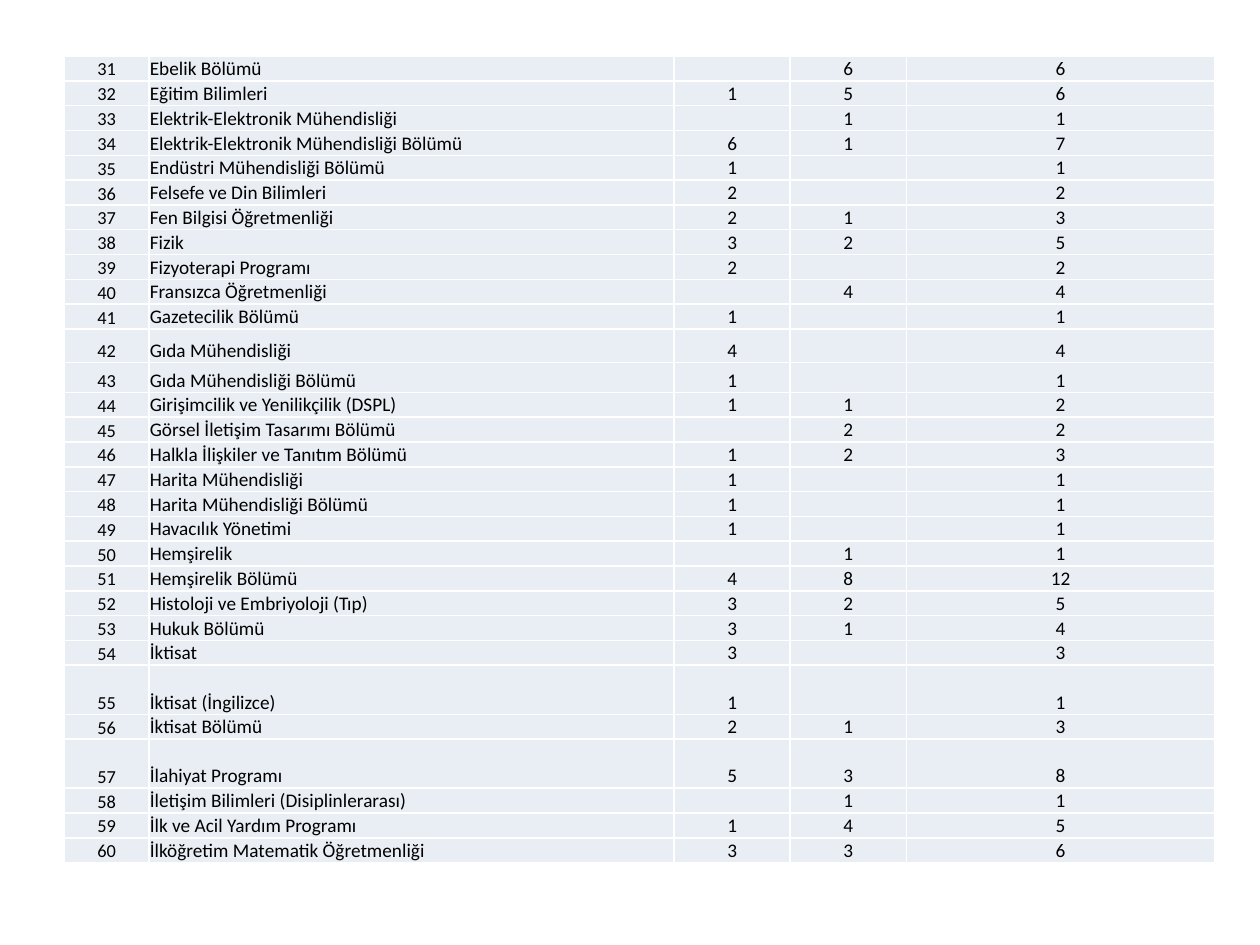
from lxml import etree
from pptx import Presentation
from pptx import util as u
from pptx.dml.color import RGBColor
from pptx.enum import text
from pptx.oxml import ns

BLACK = RGBColor(0x00, 0x00, 0x00)
WHITE = RGBColor(0xFF, 0xFF, 0xFF)
PALE = RGBColor(0xE9, 0xED, 0xF4)

FIRST = 31
WIDTHS = [1.7, 10.59, 2.34, 2.34, 6.22]
HEIGHT = 0.5
TALL = {42: 0.68, 43: 0.6, 55: 0.99, 57: 0.99}

# Department and its two counts; the last column is their sum.
UNITS = [
    ("Ebelik Bölümü", 0, 6),
    ("Eğitim Bilimleri", 1, 5),
    ("Elektrik-Elektronik Mühendisliği", 0, 1),
    ("Elektrik-Elektronik Mühendisliği Bölümü", 6, 1),
    ("Endüstri Mühendisliği Bölümü", 1, 0),
    ("Felsefe ve Din Bilimleri", 2, 0),
    ("Fen Bilgisi Öğretmenliği", 2, 1),
    ("Fizik", 3, 2),
    ("Fizyoterapi Programı", 2, 0),
    ("Fransızca Öğretmenliği", 0, 4),
    ("Gazetecilik Bölümü", 1, 0),
    ("Gıda Mühendisliği", 4, 0),
    ("Gıda Mühendisliği Bölümü", 1, 0),
    ("Girişimcilik ve Yenilikçilik (DSPL)", 1, 1),
    ("Görsel İletişim Tasarımı Bölümü", 0, 2),
    ("Halkla İlişkiler ve Tanıtım Bölümü", 1, 2),
    ("Harita Mühendisliği", 1, 0),
    ("Harita Mühendisliği Bölümü", 1, 0),
    ("Havacılık Yönetimi", 1, 0),
    ("Hemşirelik", 0, 1),
    ("Hemşirelik Bölümü", 4, 8),
    ("Histoloji ve Embriyoloji (Tıp)", 3, 2),
    ("Hukuk Bölümü", 3, 1),
    ("İktisat", 3, 0),
    ("İktisat (İngilizce)", 1, 0),
    ("İktisat Bölümü", 2, 1),
    ("İlahiyat Programı", 5, 3),
    ("İletişim Bilimleri (Disiplinlerarası)", 0, 1),
    ("İlk ve Acil Yardım Programı", 1, 4),
    ("İlköğretim Matematik Öğretmenliği", 3, 3),
]


class Deck:
    font = "Calibri"
    size = 11
    small = 10.5
    inset = u.Cm(0.02)

    def __init__(self, wide, high):
        self.prs = Presentation()
        self.prs.slide_width, self.prs.slide_height = u.Cm(wide), u.Cm(high)
        self.slide = self.prs.slides.add_slide(self.prs.slide_layouts[6])

    def table(self, left, top, widths, heights, rows):
        frame = self.slide.shapes.add_table(
            len(rows), len(widths), u.Cm(left), u.Cm(top),
            u.Cm(sum(widths)), u.Cm(sum(heights)))
        table = frame.table
        table.first_row = table.horz_banding = False
        for col, width in zip(table.columns, widths):
            col.width = u.Cm(width)
        for row, height, values in zip(table.rows, heights, rows):
            row.height = u.Cm(height)
            for i, (cell, value) in enumerate(zip(row.cells, values)):
                self.cell(cell, value, self.small if i == 0 else self.size, i != 1)

    def cell(self, cell, value, size, center):
        cell.margin_left = cell.margin_right = cell.margin_top = self.inset
        cell.margin_bottom = 0
        cell.vertical_anchor = text.MSO_ANCHOR.BOTTOM
        self.border(cell)
        cell.fill.solid()
        cell.fill.fore_color.rgb = PALE
        para = cell.text_frame.paragraphs[0]
        para.alignment = text.PP_ALIGN.CENTER if center else text.PP_ALIGN.LEFT
        if not value:
            # The end mark's size keeps an empty cell from stretching its row.
            end = etree.SubElement(para._p, ns.qn("a:endParaRPr"))
            end.set("sz", str(size * 100))
            return
        para.text = str(value)
        font = para.runs[0].font
        font.name, font.size = self.font, u.Pt(size)
        font.color.rgb = BLACK

    def border(self, cell):
        props = cell._tc.get_or_add_tcPr()
        for side in ("a:lnL", "a:lnR", "a:lnT", "a:lnB"):
            line = etree.SubElement(props, ns.qn(side), w=str(u.Pt(1)))
            fill = etree.SubElement(line, ns.qn("a:solidFill"))
            etree.SubElement(fill, ns.qn("a:srgbClr"), val=str(WHITE))


def main():
    deck = Deck(25.4, 19.05)
    rows = [(n, name, a, b, a + b)
            for n, (name, a, b) in enumerate(UNITS, FIRST)]
    heights = [TALL.get(row[0], HEIGHT) for row in rows]
    deck.table(1.3, 1.13, WIDTHS, heights, rows)
    deck.prs.save("out.pptx")


if __name__ == "__main__":
    main()
